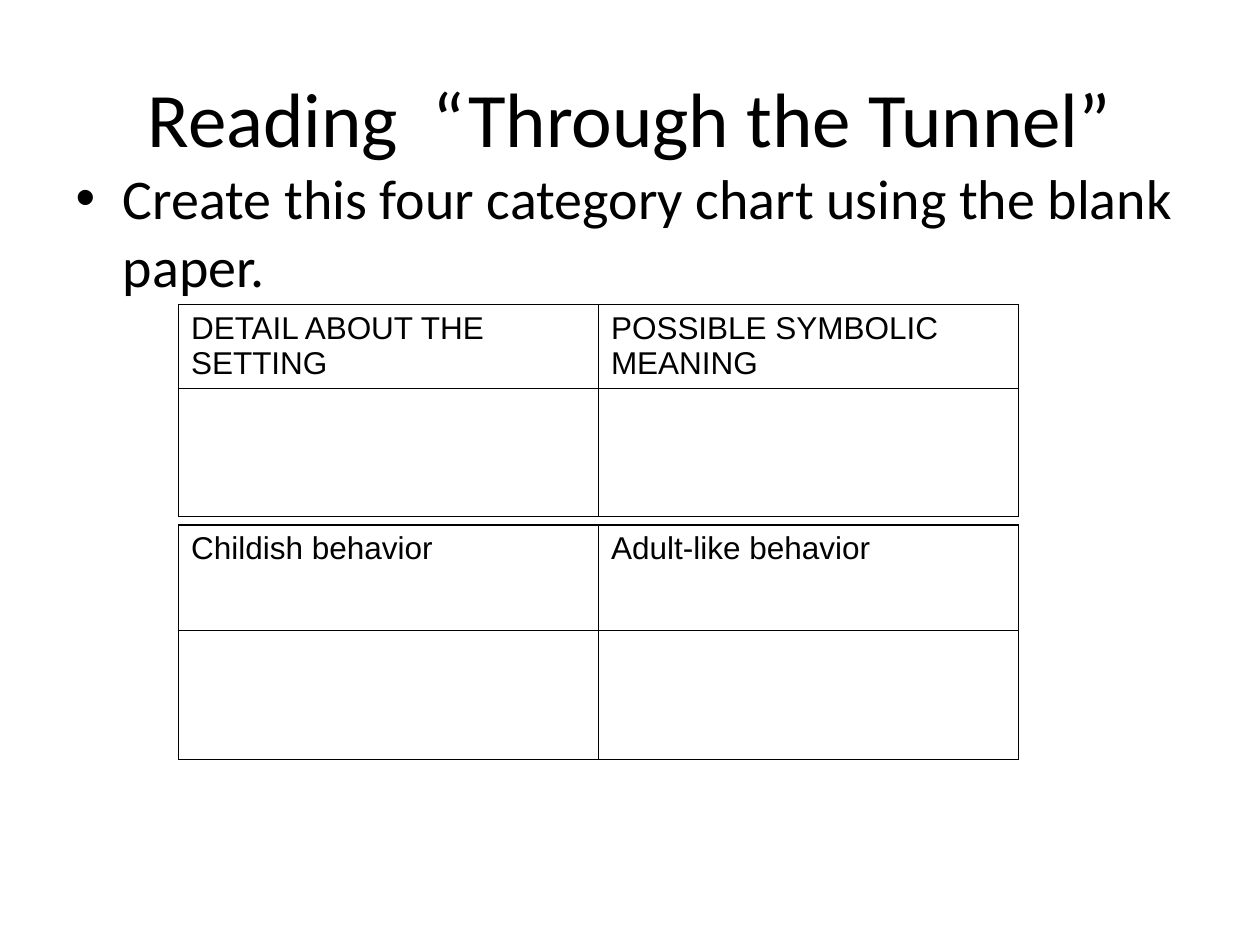
"""Build the reading slide with its two-part, four-category chart."""
from dataclasses import dataclass

from lxml.etree import SubElement as Sub
from pptx import Presentation
from pptx.dml.color import RGBColor as Rgb
from pptx.enum.text import MSO_ANCHOR as Anchor, PP_ALIGN as Align
from pptx.oxml.ns import qn
from pptx.util import Pt


@dataclass(frozen=True)
class Theme:
    ink: str = "000000"
    head: str = "Calibri"
    cell: str = "Arial"
    title: float = 44
    body: float = 32
    small: float = 18
    rule: float = 0.75


@dataclass(frozen=True)
class Grid:
    top: float
    rows: tuple[float, ...]
    heads: tuple[str, ...]


THEME = Theme()
LEFT, COL = 102, 240
GRIDS = (
    Grid(174, (48, 73.4), ("DETAIL ABOUT THE SETTING", "POSSIBLE SYMBOLIC MEANING")),
    Grid(300, (60.5, 73.4), ("Childish behavior", "Adult-like behavior")),
)


def style(para, face: str, size: float) -> None:
    """Set the font of a whole paragraph."""
    font = para.font
    font.name, font.size = face, Pt(size)
    font.color.rgb = Rgb.from_string(THEME.ink)


def place(shape, left: float, top: float, width: float, height: float) -> None:
    """Move and size a shape in points."""
    shape.left, shape.top = Pt(left), Pt(top)
    shape.width, shape.height = Pt(width), Pt(height)


def write(shape, text: str, size: float, anchor: Anchor):
    """Fill a placeholder with one paragraph and return it."""
    frame = shape.text_frame
    frame.text, frame.vertical_anchor = text, anchor
    para = frame.paragraphs[0]
    para.space_before = Pt(0)
    style(para, THEME.head, size)
    return para


def edge(cell) -> None:
    """Draw a thin rule on each side of a cell."""
    props = cell._tc.get_or_add_tcPr()
    for side in ("a:lnL", "a:lnR", "a:lnT", "a:lnB"):
        line = Sub(props, qn(side), w=str(Pt(THEME.rule)))
        Sub(Sub(line, qn("a:solidFill")), qn("a:srgbClr"), val=THEME.ink)


def draw(slide, grid: Grid) -> None:
    """Draw one ruled table with a row of headings."""
    count = len(grid.heads)
    frame = slide.shapes.add_table(len(grid.rows), count, Pt(LEFT), Pt(grid.top),
                                   Pt(COL * count), Pt(sum(grid.rows)))
    table = frame.table
    table.first_row = table.horz_banding = False
    for col in table.columns:
        col.width = Pt(COL)
    for row, high in zip(table.rows, grid.rows):
        row.height = Pt(high)
    for col, text in enumerate(grid.heads):
        table.cell(0, col).text = text
    for cell in table.iter_cells():
        edge(cell)
        cell.fill.background()
        style(cell.text_frame.paragraphs[0], THEME.cell, THEME.small)


def main() -> None:
    """Build and save the slide."""
    deck = Presentation()
    deck.slide_width, deck.slide_height = Pt(720), Pt(540)
    slide = deck.slides.add_slide(deck.slide_layouts[1])
    title, body = slide.placeholders
    place(title, 36, 21.6, 648, 90)
    head = write(title, "Reading  “Through the Tunnel”", THEME.title, Anchor.MIDDLE)
    head.alignment = Align.CENTER
    place(body, 36, 90, 648, 392.4)
    write(body, "Create this four category chart using the blank paper.",
          THEME.body, Anchor.TOP)
    for grid in GRIDS:
        draw(slide, grid)
    deck.save("out.pptx")


if __name__ == "__main__":
    main()
